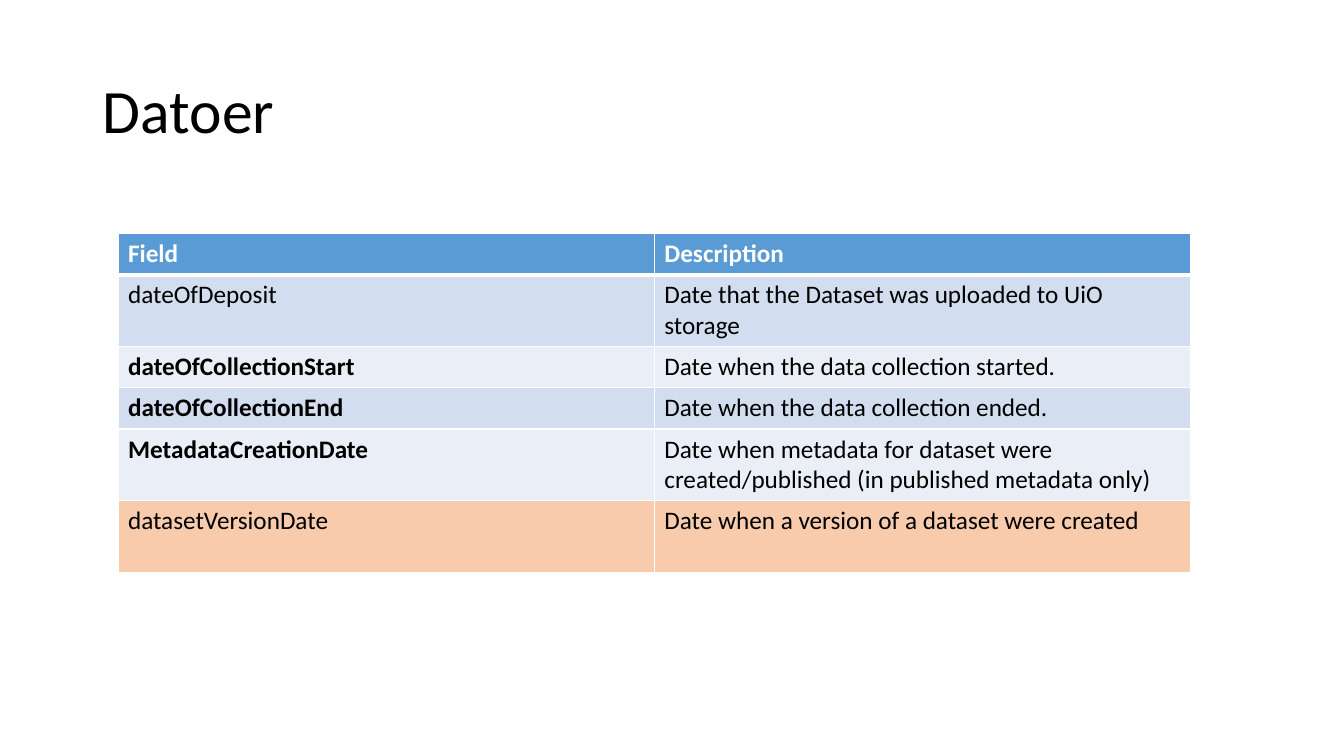
from lxml.etree import fromstring
from pptx import Presentation
from pptx.dml.color import RGBColor
from pptx.enum.text import MSO_ANCHOR, PP_ALIGN
from pptx.util import Inches, Pt

NS = "http://schemas.openxmlformats.org/drawingml/2006/main"


def add_run(para, text, size, color, bold=False):
    run = para.add_run()
    run.text = text
    run.font.name = "Calibri"
    run.font.size = Pt(size)
    run.font.bold = bold
    run.font.color.rgb = RGBColor.from_string(color)


def set_edges(cell, widths):
    props = cell._tc.get_or_add_tcPr()
    for spot, (side, width) in enumerate(zip("LRTB", widths)):
        props.insert(spot, fromstring(
            f'<a:ln{side} xmlns:a="{NS}" w="{Pt(width)}"><a:solidFill>'
            f'<a:srgbClr val="FFFFFF"/></a:solidFill></a:ln{side}>'))


deck = Presentation()
deck.slide_width = Inches(13.33)
deck.slide_height = Inches(7.5)
slide = deck.slides.add_slide(deck.slide_layouts[5])

title = slide.shapes.title
title.left, title.top = Inches(0.92), Inches(0.4)
title.width, title.height = Inches(11.5), Inches(1.45)
frame = title.text_frame
frame.vertical_anchor = MSO_ANCHOR.MIDDLE
para = frame.paragraphs[0]
para.alignment = PP_ALIGN.LEFT
para.line_spacing = 0.9
add_run(para, "Datoer", 44, "000000")

rows = [
    ("Field", "Description", 0.4, "5B9BD5", True),
    ("dateOfDeposit", "Date that the Dataset was uploaded to UiO storage",
     0.71, "D2DEEF", False),
    ("dateOfCollectionStart", "Date when the data collection started.",
     0.41, "EAEFF7", True),
    ("dateOfCollectionEnd", "Date when the data collection ended.",
     0.41, "D2DEEF", True),
    ("MetadataCreationDate",
     "Date when metadata for dataset were created/published "
     "(in published metadata only)", 0.71, "EAEFF7", True),
    ("datasetVersionDate", "Date when a version of a dataset were created",
     0.71, "F8CBAD", False),
]
high = sum(row[2] for row in rows)
table = slide.shapes.add_table(len(rows), 2, Inches(1.17), Inches(2.32),
                               Inches(10.64), Inches(high)).table
for col in table.columns:
    col.width = Inches(5.32)

for r, (field, about, height, fill, bold) in enumerate(rows):
    table.rows[r].height = Inches(height)
    head = r == 0
    for c, text in enumerate((field, about)):
        cell = table.cell(r, c)
        cell.fill.solid()
        cell.fill.fore_color.rgb = RGBColor.from_string(fill)
        set_edges(cell, (1, 1, 3 if r == 1 else 1, 3 if head else 1))
        add_run(cell.text_frame.paragraphs[0], text, 18,
                "FFFFFF" if head else "000000", head or (bold and c == 0))

deck.save("out.pptx")
